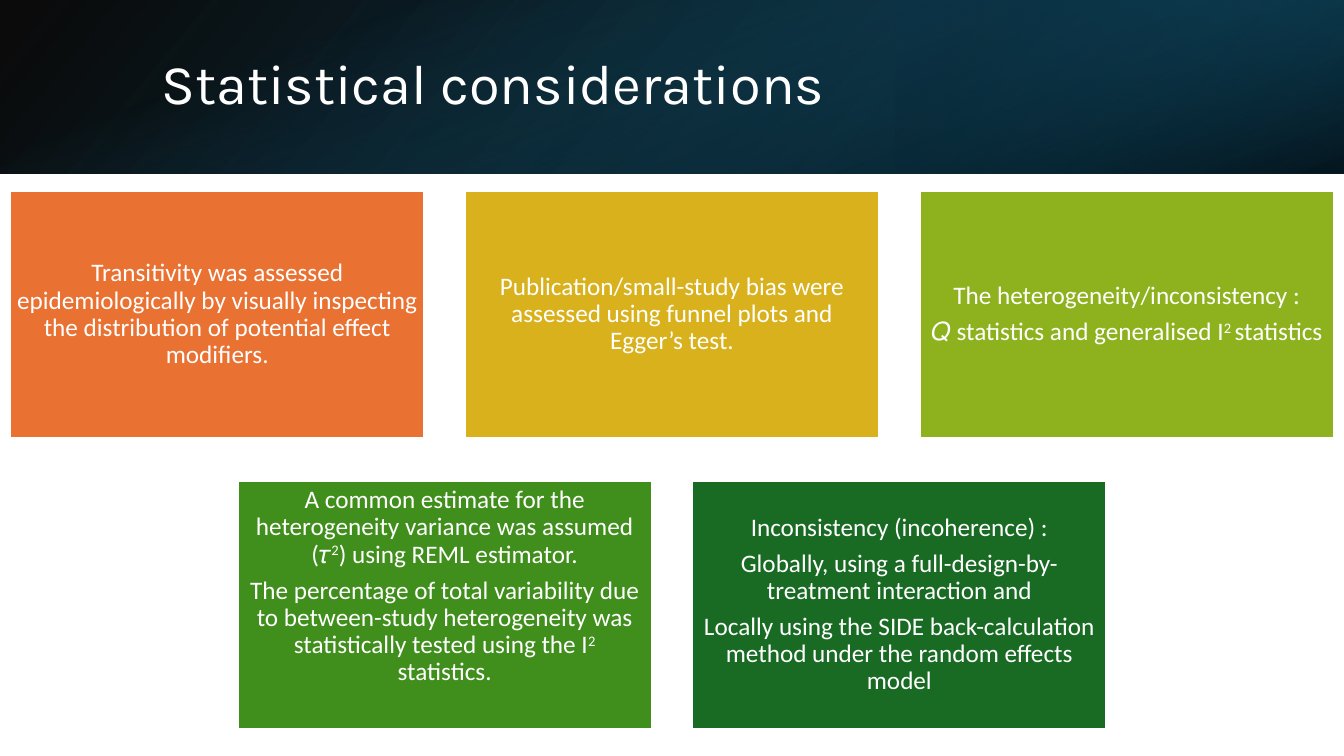
from lxml import etree
from pptx import Presentation
from pptx import util as u
from pptx.dml.color import RGBColor
from pptx.enum import shapes, text
from pptx.oxml import ns

# Content: text between ^ marks is superscript
TITLE = "Statistical considerations"
ORANGE = RGBColor(0xE9, 0x71, 0x32)
GOLD = RGBColor(0xD8, 0xB1, 0x1D)
LIME = RGBColor(0x8E, 0xB2, 0x1E)
GREEN = RGBColor(0x40, 0x8E, 0x1C)
FOREST = RGBColor(0x19, 0x6B, 0x24)
WHITE = RGBColor(0xFF, 0xFF, 0xFF)
BLACK = RGBColor(0x00, 0x00, 0x00)
TEAL = RGBColor(0x10, 0x48, 0x62)
NAVY = RGBColor(0x0B, 0x30, 0x41)
BLUE = RGBColor(0x15, 0x60, 0x82)

# Insets are left, top, right, bottom
INSETS = (0.07, 0.07, 0.07, 0.07)
RAISED = (0.1, 0, 0.1, 0.36)
CARD_ROWS = [
    [
        (ORANGE, INSETS, [
            "Transitivity was assessed epidemiologically by visually "
            "inspecting the distribution of potential effect modifiers."]),
        (GOLD, INSETS, [
            "Publication/small-study bias were assessed using funnel plots "
            "and Egger’s test."]),
        (LIME, INSETS, [
            "The heterogeneity/inconsistency :",
            "𝑄 statistics and generalised I^2 ^statistics"]),
    ],
    [
        (GREEN, RAISED, [
            "A common estimate for the heterogeneity variance was assumed "
            "(𝜏^2^) using REML estimator.",
            "The percentage of total variability due to between-study "
            "heterogeneity was statistically tested using the I^2 ^statistics."]),
        (FOREST, INSETS, [
            "Inconsistency (incoherence) :",
            "Globally, using a full-design-by-treatment interaction and",
            "Locally using the SIDE back-calculation method under the "
            "random effects model"]),
    ],
]

# Layout in inches
WIDTH, HEIGHT, BAND = 13.33, 7.5, 1.72
CARD_WIDTH, CARD_HEIGHT, GAP = 4.11, 2.46, 0.4
CARDS_TOP, ROW_STEP = 1.89, 2.88

# Header layers: box, rotation, flipped, angle, stops (position, colour, opacity)
LAYERS = [
    ((0, 0, WIDTH, BAND), 0, True, 140, [(0, BLACK, 96), (100, TEAL, 100)]),
    ((WIDTH * 2 / 3, 0, WIDTH / 3, BAND), 180, True, 320,
     [(19, NAVY, 68), (100, BLUE, 79)]),
    (((WIDTH - BAND) / 2, (BAND - WIDTH) / 2, BAND, WIDTH), 90, False, 340,
     [(23, BLUE, 0), (99, BLACK, 74)]),
]


def add_rectangle(slide, box):
    shape = slide.shapes.add_shape(
        shapes.MSO_SHAPE.RECTANGLE, *(u.Inches(length) for length in box))
    shape.shadow.inherit = False
    return shape


def fill_gradient(shape, angle, stops):
    properties = shape._element.spPr
    gradient = etree.Element(ns.qn("a:gradFill"), rotWithShape="1")
    stop_list = etree.SubElement(gradient, ns.qn("a:gsLst"))
    for position, colour, opacity in stops:
        stop = etree.SubElement(stop_list, ns.qn("a:gs"), pos=str(position * 1000))
        value = etree.SubElement(stop, ns.qn("a:srgbClr"), val=str(colour))
        etree.SubElement(value, ns.qn("a:alpha"), val=str(opacity * 1000))
    etree.SubElement(gradient, ns.qn("a:lin"), ang=str(angle * 60000), scaled="0")
    properties.find(ns.qn("a:prstGeom")).addnext(gradient)


def format_font(font, name, size):
    for key, value in {"name": name, "size": u.Pt(size)}.items():
        setattr(font, key, value)
    font.color.rgb = WHITE


def write_paragraph(paragraph, content):
    paragraph_format = {"alignment": text.PP_ALIGN.CENTER, "line_spacing": 0.9,
                        "space_after": u.Pt(6.3)}
    for key, value in paragraph_format.items():
        setattr(paragraph, key, value)
    for index, part in enumerate(content.split("^")):
        run = paragraph.add_run()
        run.text = part
        format_font(run.font, "Calibri", 18)
        if index % 2:
            run.font._element.set("baseline", "30000")


def add_card(slide, box, colour, insets, paragraphs):
    card = add_rectangle(slide, box)
    card.fill.solid()
    card.fill.fore_color.rgb = colour
    card.line.color.rgb = WHITE
    card.line.width = u.Pt(1.5)
    frame = card.text_frame
    frame.word_wrap = True
    frame.vertical_anchor = text.MSO_ANCHOR.MIDDLE
    for side, inset in zip(("left", "top", "right", "bottom"), insets):
        setattr(frame, f"margin_{side}", u.Inches(inset))
    for index, content in enumerate(paragraphs):
        paragraph = frame.add_paragraph() if index else frame.paragraphs[0]
        write_paragraph(paragraph, content)


def main():
    presentation = Presentation()
    presentation.slide_width = u.Inches(WIDTH)
    presentation.slide_height = u.Inches(HEIGHT)
    slide = presentation.slides.add_slide(presentation.slide_layouts[5])

    # Header band
    for box, rotation, flipped, angle, stops in LAYERS:
        layer = add_rectangle(slide, box)
        layer.rotation = rotation
        layer.line.fill.background()
        if flipped:
            layer._element.spPr.xfrm.set("flipH", "1")
        fill_gradient(layer, angle, stops)

    # Title, brought in front of the band
    title = slide.shapes.title
    slide.shapes._spTree.append(title._element)
    title_box = {"left": 1.5, "top": 0.38, "width": 10.98, "height": 0.96}
    for key, value in title_box.items():
        setattr(title, key, u.Inches(value))
    title.text_frame.text = TITLE
    title.text_frame.vertical_anchor = text.MSO_ANCHOR.MIDDLE
    paragraph = title.text_frame.paragraphs[0]
    paragraph.alignment = text.PP_ALIGN.LEFT
    paragraph.line_spacing = 0.9
    format_font(paragraph.runs[0].font, "Karla", 40)

    # Cards, each row centred on the slide
    for row, cards in enumerate(CARD_ROWS):
        row_width = len(cards) * (CARD_WIDTH + GAP) - GAP
        for column, card in enumerate(cards):
            left = (WIDTH - row_width) / 2 + column * (CARD_WIDTH + GAP)
            top = CARDS_TOP + row * ROW_STEP
            add_card(slide, (left, top, CARD_WIDTH, CARD_HEIGHT), *card)

    presentation.save("out.pptx")


if __name__ == "__main__":
    main()
